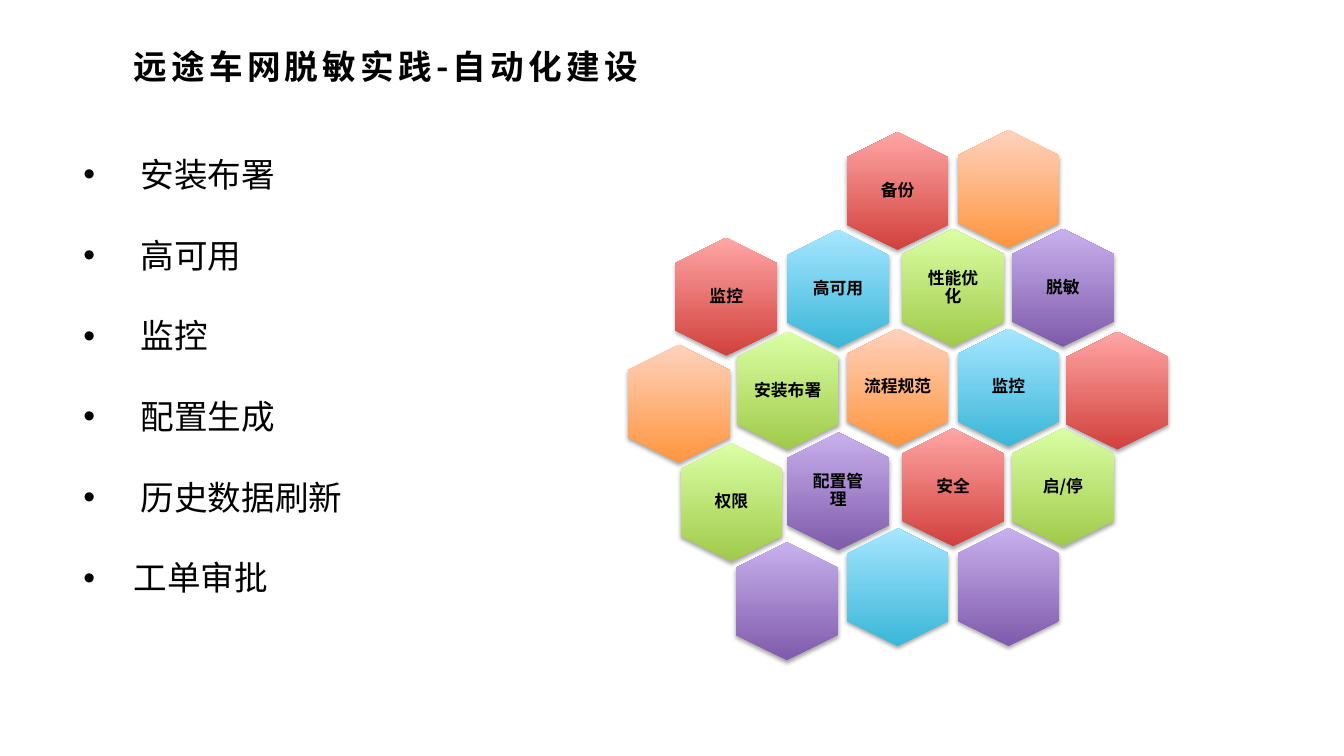
from lxml.etree import SubElement
from pptx import Presentation
from pptx.dml.color import RGBColor
from pptx.enum.shapes import MSO_SHAPE as SHAPE
from pptx.enum.text import MSO_ANCHOR as ANCHOR, PP_ALIGN as ALIGN
from pptx.oxml.ns import qn
from pptx.util import Pt

HUES = {
    "red": ("D1403C", "FFA6A5"),
    "orange": ("FF953E", "FFD2BD"),
    "green": ("A0CA4A", "DAFFA5"),
    "blue": ("39B7D8", "A7E6FF"),
    "purple": ("7F5BAB", "C8B0ED"),
}
CELLS = [
    (798.1, 279, "red", "", 0),
    (562.7, 279, "green", "安装布署", 0),
    (598.7, 351, "purple", "配置管理", 3.6),
    (598.7, 206.3, "blue", "高可用", 0),
    (720.4, 135, "orange", "", 0),
    (641.2, 136.4, "red", "备份", 0),
    (680.8, 205.6, "green", "性能优化", 3.6),
    (759.2, 205.6, "purple", "脱敏", 0),
    (720.4, 276.8, "blue", "监控", 3.6),
    (641.2, 276.8, "orange", "流程规范", 0),
    (680.8, 348.1, "red", "安全", 3.6),
    (759.2, 348.1, "green", "启/停", 0),
    (720.4, 419.4, "purple", "", 0),
    (641.2, 419.4, "blue", "", 0),
    (484.9, 288.4, "orange", "", 0),
    (518.8, 212, "red", "监控", 0),
    (522.4, 358.9, "green", "权限", 3.6),
    (562, 429.5, "purple", "", 0),
]
TOPICS = [("安装布署", 41), ("高可用", 41), ("监控", 41),
          ("配置生成", 41), ("历史数据刷新", 41), ("工单审批", 36)]


def rgb(value):
    return RGBColor.from_string(value)


class Deck:
    """Holds the text style and the current slide."""

    font = "Noto Sans CJK SC"
    ink = "000000"
    hex_w, hex_h = 84.24, 72.72
    label_w, label_h = 50.4, 57.6

    def __init__(self, s):
        self.s = s

    def style(self, p, size, bold=False, spacing=0):
        for r in p.runs:
            r.font.size, r.font.bold = Pt(size), bold
            r.font.color.rgb = rgb(self.ink)
            r.font.name = self.font
            rPr = r.font._element
            SubElement(rPr, qn("a:ea")).set("typeface", self.font)
            if spacing:
                rPr.set("spc", str(spacing * 100))

    def box(self, x, y, w, h):
        tf = self.s.shapes.add_textbox(Pt(x), Pt(y), Pt(w), Pt(h)).text_frame
        tf.word_wrap = True
        return tf

    def title(self, text, x, y, w, h):
        tf = self.box(x, y, w, h)
        tf.text = text
        self.style(tf.paragraphs[0], 24, bold=True, spacing=3)

    def bullets(self, items, x, y, w, h, gap):
        tf = self.box(x, y, w, h)
        for i, (text, indent) in enumerate(items):
            p = tf.add_paragraph() if i else tf.paragraphs[0]
            p.text = text
            if i:
                p.space_before = Pt(gap)
            pPr = p._p.get_or_add_pPr()
            pPr.set("marL", str(Pt(indent)))
            pPr.set("indent", str(-Pt(indent)))
            SubElement(pPr, qn("a:buFont")).set("typeface", "Arial")
            SubElement(pPr, qn("a:buChar")).set("char", "•")
            self.style(p, 24)

    def hexagon(self, cx, cy, hue):
        w, h = self.hex_w, self.hex_h
        sp = self.s.shapes.add_shape(
            SHAPE.HEXAGON, Pt(cx - w / 2), Pt(cy - h / 2), Pt(w), Pt(h))
        sp.rotation = 90
        sp.adjustments[0] = 0.25
        sp.line.fill.background()
        sp.fill.gradient()
        sp.fill.gradient_angle = 90
        for stop, color in zip(sp.fill.gradient_stops, HUES[hue]):
            stop.color.rgb = rgb(color)
        spPr = sp._element.spPr
        spPr.find(qn("a:gradFill")).set("rotWithShape", "0")
        sp.shadow.inherit = False
        shadow = SubElement(spPr.find(qn("a:effectLst")), qn("a:outerShdw"), {
            "blurRad": str(Pt(3.1)), "dist": str(Pt(1.8)),
            "dir": "5400000", "rotWithShape": "0"})
        color = SubElement(shadow, qn("a:srgbClr"), val="000000")
        SubElement(color, qn("a:alpha"), val="35000")

    def label(self, text, cx, cy, inset):
        w, h = self.label_w, self.label_h
        tf = self.box(cx - w / 2, cy - h / 2, w, h)
        tf.margin_left = tf.margin_right = Pt(inset)
        tf.margin_top = tf.margin_bottom = Pt(inset)
        tf.vertical_anchor = ANCHOR.MIDDLE
        tf.text = text
        p = tf.paragraphs[0]
        p.alignment = ALIGN.CENTER
        p.line_spacing = 0.9
        self.style(p, 12, bold=True)


def main():
    prs = Presentation()
    prs.slide_width, prs.slide_height = Pt(960), Pt(540)
    deck = Deck(prs.slides.add_slide(prs.slide_layouts[6]))
    deck.title("远途车网脱敏实践-自动化建设", 88.5, 29.5, 666, 36)
    deck.bullets(TOPICS, 52.5, 106.5, 279.5, 356.5, gap=28.8)
    for cx, cy, hue, text, inset in CELLS:
        deck.hexagon(cx, cy, hue)
        if text:
            deck.label(text, cx, cy, inset)
    prs.save("out.pptx")


if __name__ == "__main__":
    main()
